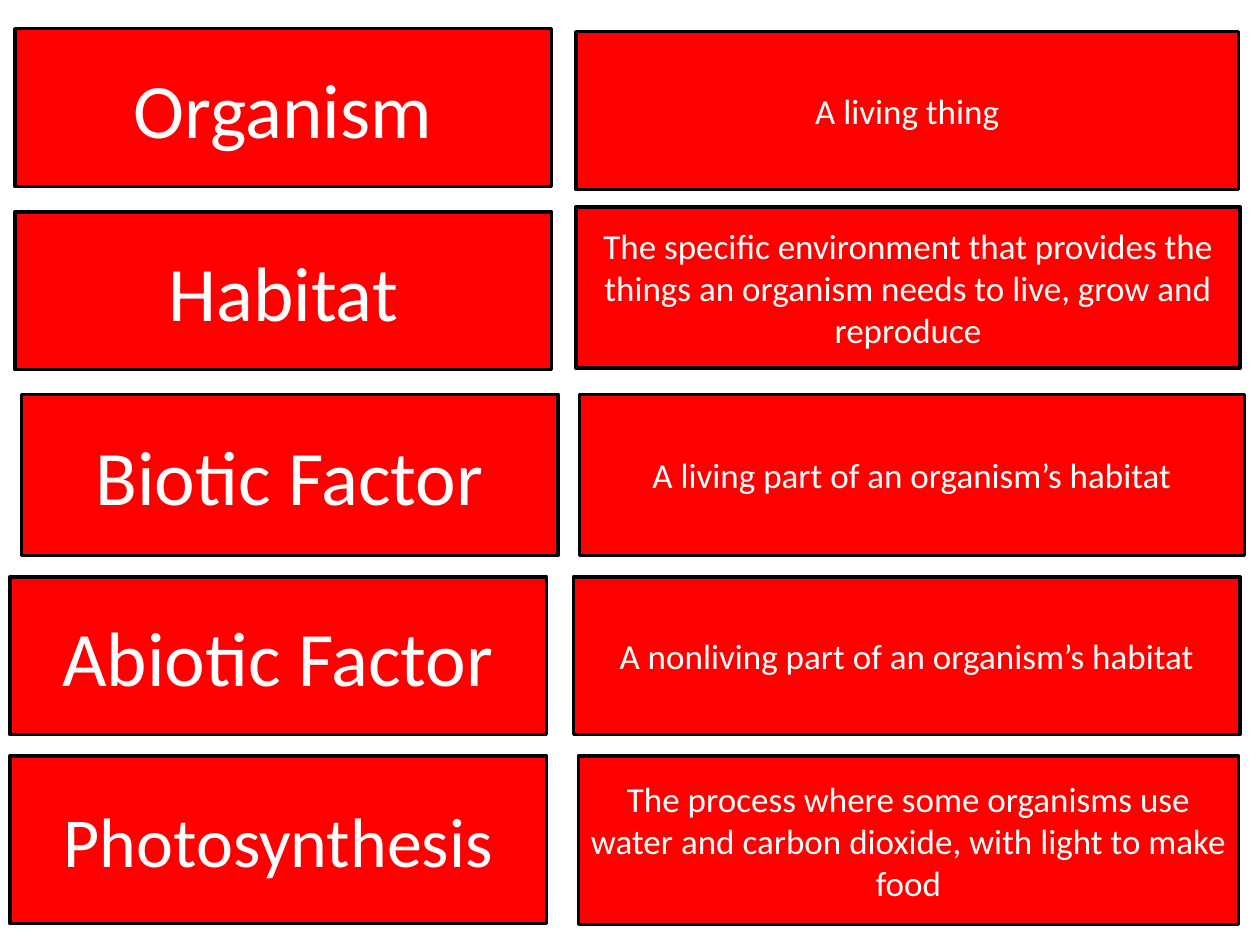
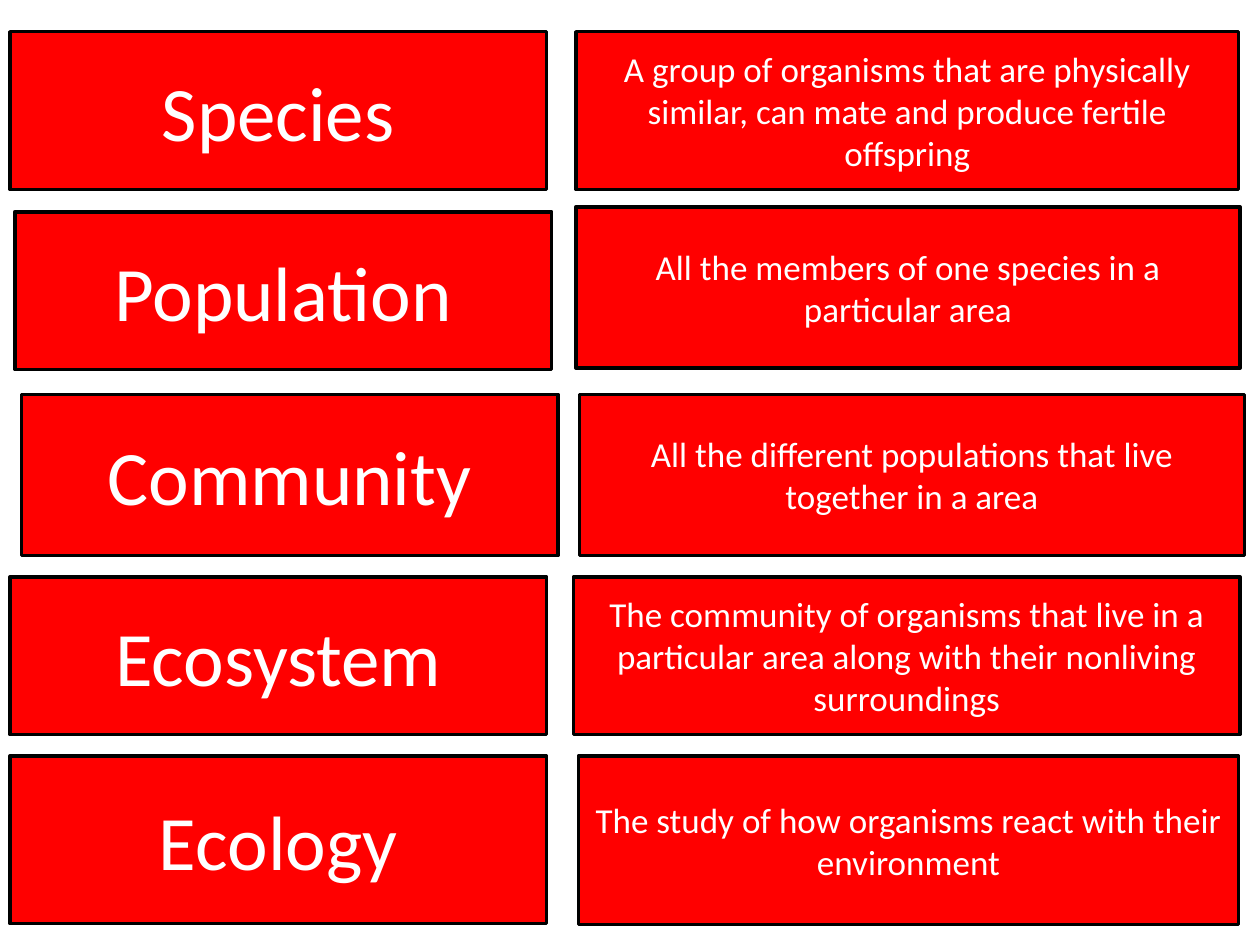
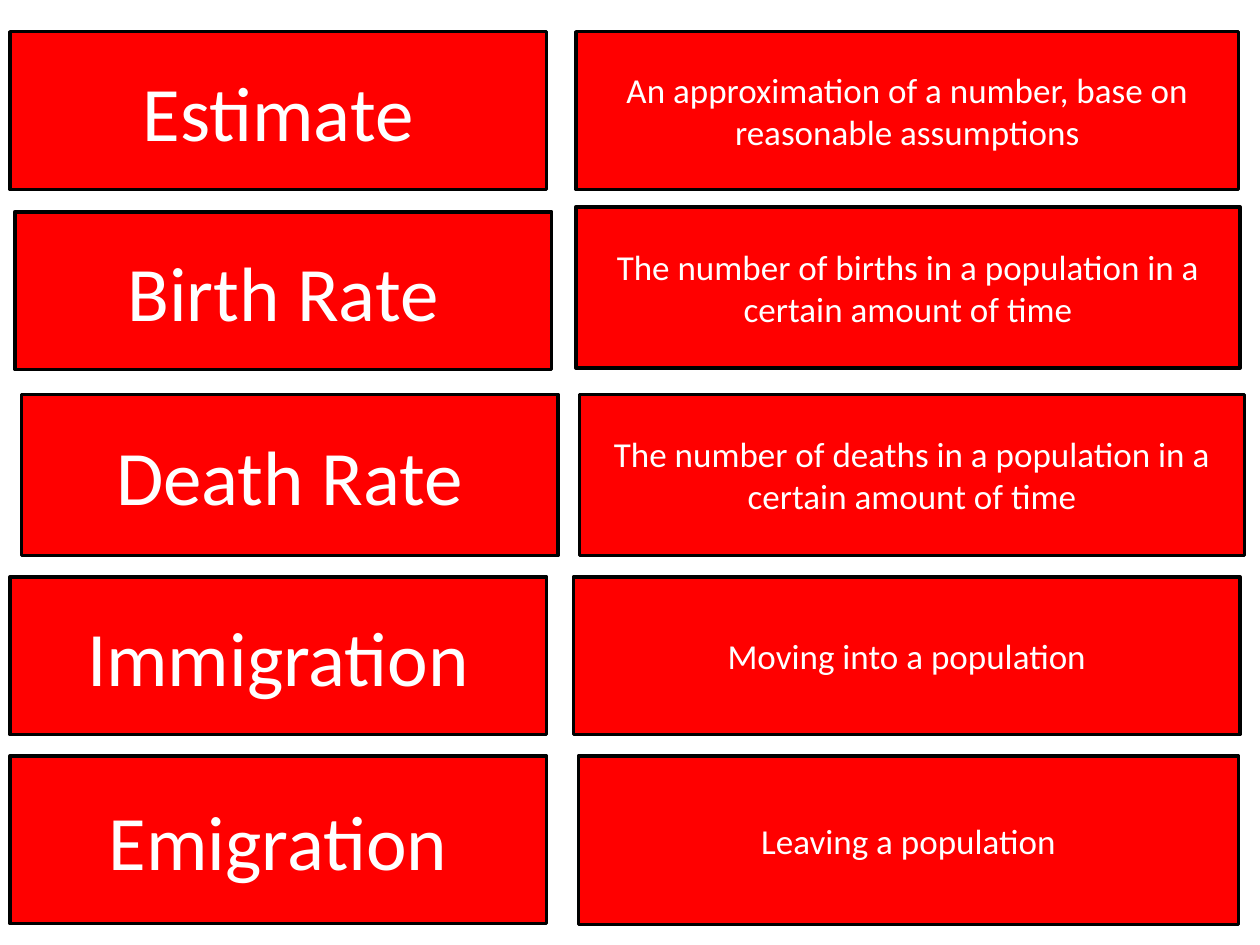
from collections import namedtuple

from pptx import Presentation
from pptx.dml.color import RGBColor
from pptx.enum.shapes import MSO_SHAPE
from pptx.enum.text import MSO_ANCHOR, PP_ALIGN
from pptx.util import Cm, Pt

PROCESS = MSO_SHAPE.FLOWCHART_PROCESS
CENTER = PP_ALIGN.CENTER
MIDDLE = MSO_ANCHOR.MIDDLE

COLORS = {"card": "FF0000", "border": "000000", "text": "FFFFFF"}
FONT = "Calibri"
BORDER_WIDTH = 2
TERM_SIZE = 44
LONG_TERM_SIZE = 40
LONG_TERM_LENGTH = 14
DEFINITION_SIZE = 20
TERM_WIDTH = 10.82
BLANK_LAYOUT = 6

Box = namedtuple("Box", "left top width height")

ROWS = [
    (Box(0.2, 0.64, TERM_WIDTH, 3.18), Box(11.61, 0.64, 13.36, 3.18)),
    (Box(0.3, 4.27, TERM_WIDTH, 3.18), Box(11.61, 4.17, 13.39, 3.25)),
    (Box(0.43, 7.95, TERM_WIDTH, 3.25), Box(11.68, 7.95, 13.41, 3.25)),
    (Box(0.2, 11.63, TERM_WIDTH, 3.18), Box(11.56, 11.63, 13.44, 3.18)),
    (Box(0.2, 15.24, TERM_WIDTH, 3.38), Box(11.66, 15.24, 13.31, 3.4)),
]
OPENING_TERM_BOX = Box(0.3, 0.58, TERM_WIDTH, 3.18)
OPENING_ROWS = [(OPENING_TERM_BOX, ROWS[0][1])] + ROWS[1:]

ORGANISM_WORDS = [
    ("Organism", "A living thing"),
    ("Habitat", "The specific environment that provides the things an organism "
                "needs to live, grow and reproduce"),
    ("Biotic Factor", "A living part of an organism’s habitat"),
    ("Abiotic Factor", "A nonliving part of an organism’s habitat"),
    ("Photosynthesis", "The process where some organisms use water and carbon "
                       "dioxide, with light to make food"),
]
ECOLOGY_WORDS = [
    ("Species", "A group of organisms that are physically similar, can mate "
                "and produce fertile offspring"),
    ("Population", "All the members of one species in a particular area"),
    ("Community", "All the different populations that live together in a area"),
    ("Ecosystem", "The community of organisms that live in a particular area "
                  "along with their nonliving surroundings"),
    ("Ecology", "The study of how organisms react with their environment"),
]
POPULATION_WORDS = [
    ("Estimate", "An approximation of a number, base on reasonable assumptions"),
    ("Birth Rate", "The number of births in a population in a certain amount of time"),
    ("Death Rate", "The number of deaths in a population in a certain amount of time"),
    ("Immigration", "Moving into a population"),
    ("Emigration", "Leaving a population"),
]


def color(name):
    """Return the named palette colour."""
    return RGBColor.from_string(COLORS[name])


def add_card(page, box, text, size):
    """Draw one bordered card with centred text in the box."""
    card = page.shapes.add_shape(PROCESS, *(Cm(length) for length in box))
    card.shadow.inherit = False
    card.fill.solid()
    card.fill.fore_color.rgb = color("card")
    card.line.color.rgb = color("border")
    card.line.width = Pt(BORDER_WIDTH)
    frame = card.text_frame
    frame.word_wrap = True
    frame.vertical_anchor = MIDDLE
    para = frame.paragraphs[0]
    para.alignment = CENTER
    span = para.add_run()
    span.text = text
    span.font.name = FONT
    span.font.size = Pt(size)
    span.font.color.rgb = color("text")


def term_size(term):
    """Return a smaller size for a long single word."""
    is_long = len(term) >= LONG_TERM_LENGTH and " " not in term
    return LONG_TERM_SIZE if is_long else TERM_SIZE


def add_vocabulary_page(deck, words, rows):
    """Add a page that pairs each term card with its definition card."""
    page = deck.slides.add_slide(deck.slide_layouts[BLANK_LAYOUT])
    for (term, definition), (term_box, definition_box) in zip(words, rows):
        add_card(page, term_box, term, term_size(term))
        add_card(page, definition_box, definition, DEFINITION_SIZE)


def main():
    """Build and save the vocabulary deck."""
    deck = Presentation()
    deck.slide_width = Cm(25.4)
    deck.slide_height = Cm(19.05)
    add_vocabulary_page(deck, ORGANISM_WORDS, OPENING_ROWS)
    add_vocabulary_page(deck, ECOLOGY_WORDS, ROWS)
    add_vocabulary_page(deck, POPULATION_WORDS, ROWS)
    deck.save("out.pptx")


if __name__ == "__main__":
    main()
